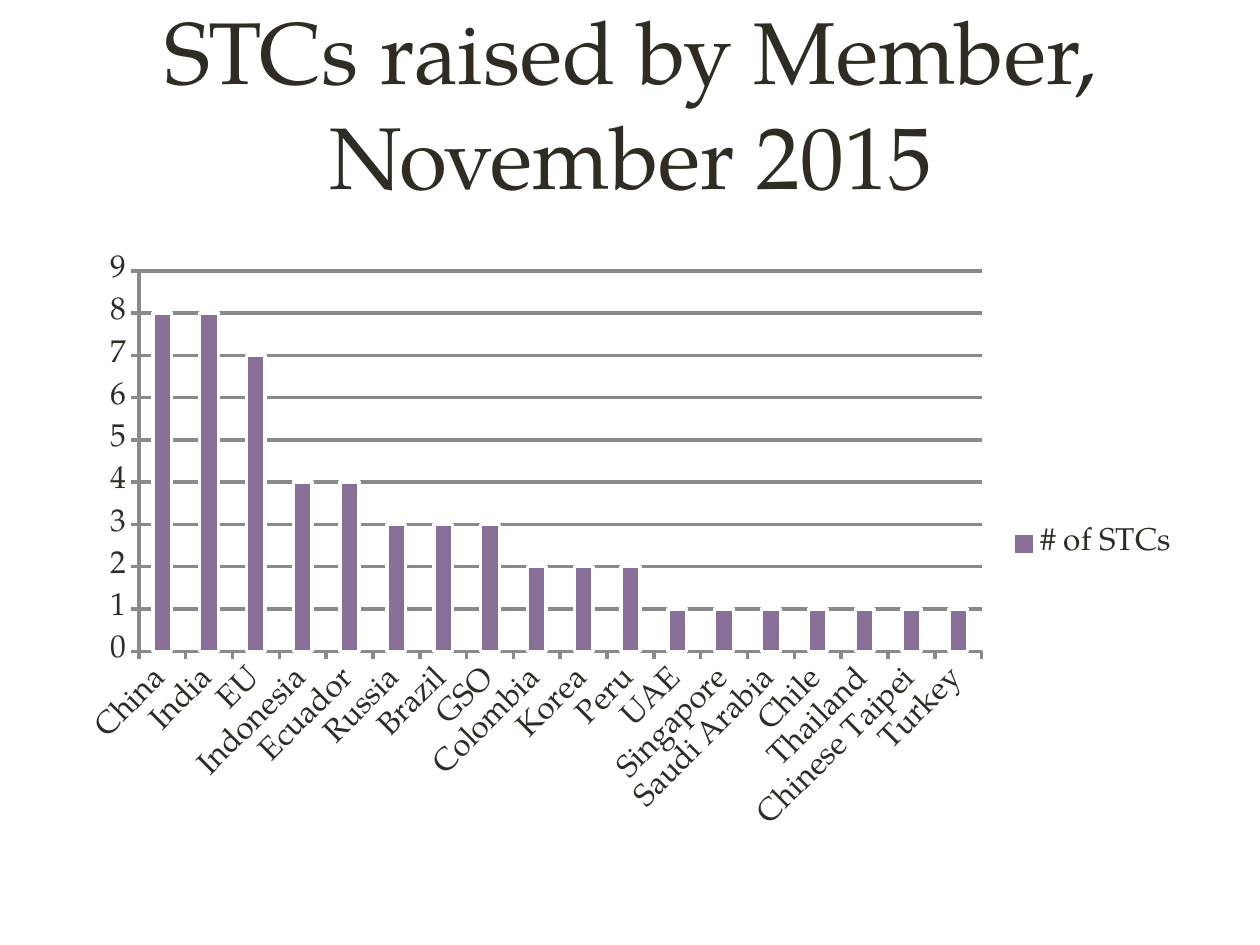
from pptx import Presentation
from pptx.chart.data import CategoryChartData
from pptx.dml.color import RGBColor
from pptx.enum.chart import XL_CHART_TYPE, XL_LEGEND_POSITION, XL_TICK_MARK
from pptx.enum.text import MSO_ANCHOR, MSO_AUTO_SIZE, PP_ALIGN
from pptx.util import Inches, Pt

TITLE = "STCs raised by Member, November 2015"
SERIES = "# of STCs"
COUNTS = {
    "China": 8, "India": 8, "EU": 7, "Indonesia": 4, "Ecuador": 4,
    "Russia": 3, "Brazil": 3, "GSO": 3, "Colombia": 2, "Korea": 2,
    "Peru": 2, "UAE": 1, "Singapore": 1, "Saudi Arabia": 1, "Chile": 1,
    "Thailand": 1, "Chinese Taipei": 1, "Turkey": 1,
}
FONT = "TeX Gyre Pagella"
INK = RGBColor(0x30, 0x2C, 0x24)
PURPLE = RGBColor(0x87, 0x6F, 0x98)
GRAY = RGBColor(0x8A, 0x8A, 0x8A)
WHITE = RGBColor(0xFF, 0xFF, 0xFF)
LEFT, WIDTH = Inches(0.55), Inches(8.91)


def set_font(font, size):
    font.name, font.size, font.bold = FONT, Pt(size), False
    font.color.rgb = INK


def set_line(line, color):
    line.color.rgb = color
    line.width = Pt(2)


def add_title(slide):
    title = slide.shapes.title
    title.left, title.top = LEFT, Inches(0.1)
    title.width, title.height = WIDTH, Inches(1.59)
    frame = title.text_frame
    frame.text = TITLE
    frame.word_wrap = True
    frame.auto_size = MSO_AUTO_SIZE.NONE
    frame.vertical_anchor = MSO_ANCHOR.BOTTOM
    para = frame.paragraphs[0]
    para.alignment = PP_ALIGN.CENTER
    set_font(para.font, 50)


def add_bars(slide):
    data = CategoryChartData()
    data.categories = list(COUNTS)
    data.add_series(SERIES, list(COUNTS.values()))
    chart = slide.shapes.add_chart(
        XL_CHART_TYPE.COLUMN_CLUSTERED, LEFT, Inches(1.93),
        WIDTH, Inches(4.77), data).chart
    set_font(chart.font, 18)
    chart.has_title = False
    chart.has_legend = True
    chart.legend.position = XL_LEGEND_POSITION.RIGHT
    chart.legend.include_in_layout = False

    for axis in (chart.category_axis, chart.value_axis):
        axis.major_tick_mark = XL_TICK_MARK.OUTSIDE
        axis.minor_tick_mark = XL_TICK_MARK.NONE
        set_line(axis.format.line, GRAY)
    scale = chart.value_axis
    scale.minimum_scale, scale.maximum_scale, scale.major_unit = 0, 9, 1
    scale.has_major_gridlines = True
    set_line(scale.major_gridlines.format.line, GRAY)

    plot = chart.plots[0]
    plot.gap_width = 150
    plot.vary_by_categories = False
    bars = plot.series[0].format
    bars.fill.solid()
    bars.fill.fore_color.rgb = PURPLE
    set_line(bars.line, WHITE)


def main():
    deck = Presentation()
    deck.slide_width, deck.slide_height = Inches(10), Inches(7.5)
    slide = deck.slides.add_slide(deck.slide_layouts[5])
    add_title(slide)
    add_bars(slide)
    deck.save("out.pptx")


if __name__ == "__main__":
    main()
